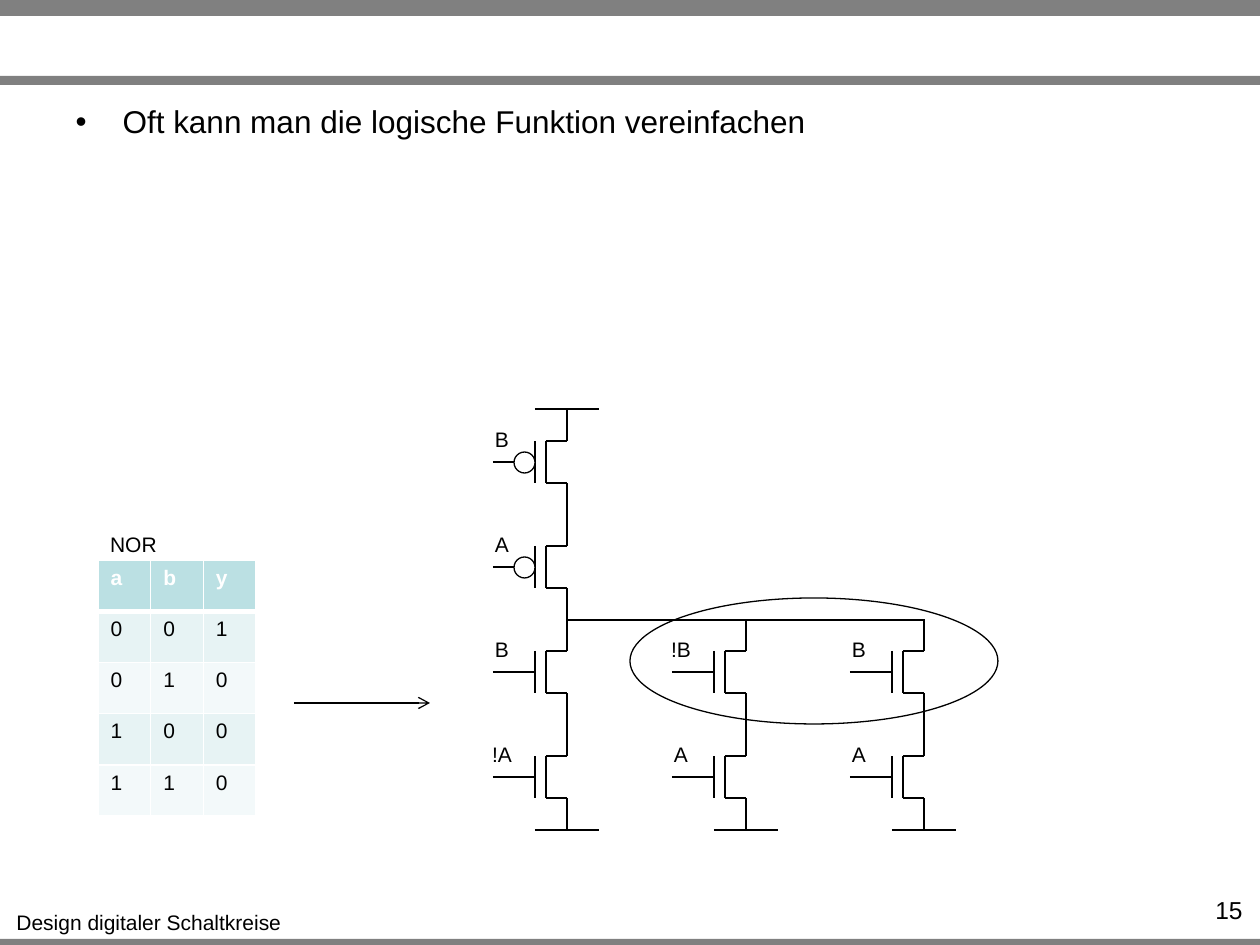
from lxml.etree import SubElement
from pptx import Presentation
from pptx.dml.color import RGBColor
from pptx.enum.shapes import MSO_CONNECTOR, MSO_SHAPE
from pptx.enum.text import MSO_ANCHOR, MSO_AUTO_SIZE, PP_ALIGN
from pptx.oxml.ns import qn
from pptx.util import Pt

BLACK = RGBColor(0x00, 0x00, 0x00)
WHITE = RGBColor(0xFF, 0xFF, 0xFF)
GREY = RGBColor(0x80, 0x80, 0x80)
HEADER = RGBColor(0xBB, 0xE0, 0xE3)
ODD_ROW = RGBColor(0xE7, 0xF3, 0xF4)
EVEN_ROW = RGBColor(0xF3, 0xF9, 0xFA)

WIDTH, HEIGHT = 1260, 945
PITCH = 105  # distance between stacked transistors
SUPPLY, RAIL, GROUND = 409, 620, 830
TOP_ROW = 462

TRUTH_TABLE = ["aby", "001", "010", "100", "110"]
# Drain x, row of the first transistor, gate labels from top to bottom
BRANCHES = [(567, 0, ["B", "A", "B", "!A"]),
            (746, 2, ["!B", "A"]),
            (924, 2, ["B", "A"])]
P_ROWS = 2


def px(length):
    return round(length * 914400 / 126)


class SlideBuilder:
    font = "Arial"
    line_width = Pt(0.75)

    def __init__(self, deck):
        self.slide = deck.slides.add_slide(deck.slide_layouts[1])
        self.shapes = self.slide.shapes

    def style(self, para, size, color=BLACK, bold=False):
        para.font.name = self.font
        para.font.size = Pt(size)
        para.font.bold = bold
        para.font.color.rgb = color

    def bullet(self, text, x, y, width, height):
        title = self.shapes.title.element
        title.getparent().remove(title)
        body = self.slide.placeholders[1]
        body.left, body.top, body.width, body.height = map(px, (x, y, width, height))
        frame = body.text_frame
        frame.auto_size = MSO_AUTO_SIZE.NONE
        frame.vertical_anchor = MSO_ANCHOR.TOP
        para = frame.paragraphs[0]
        para.text = text
        para.space_before = Pt(0)
        properties = para._p.get_or_add_pPr()
        properties.set("marL", str(px(47)))
        properties.set("indent", str(px(-47)))
        self.style(para, 18)

    def text(self, text, x, y, width, height=38, size=12, align=PP_ALIGN.CENTER):
        box = self.shapes.add_textbox(px(x), px(y), px(width), px(height))
        box.text_frame.word_wrap = False
        para = box.text_frame.paragraphs[0]
        para.text = text
        para.alignment = align
        self.style(para, size)

    def shape(self, kind, x, y, width, height, fill=None, line=None):
        shape = self.shapes.add_shape(kind, px(x), px(y), px(width), px(height))
        shape.shadow.inherit = False
        if fill is None:
            shape.fill.background()
        else:
            shape.fill.solid()
            shape.fill.fore_color.rgb = fill
        if line is None:
            shape.line.fill.background()
        else:
            shape.line.color.rgb = line
            shape.line.width = self.line_width

    def line(self, x1, y1, x2, y2, arrow=False):
        connector = self.shapes.add_connector(
            MSO_CONNECTOR.STRAIGHT, px(x1), px(y1), px(x2), px(y2))
        connector.line.color.rgb = BLACK
        connector.line.width = self.line_width
        if arrow:
            SubElement(connector.line._get_or_add_ln(), qn("a:tailEnd"), type="arrow")
        SubElement(connector.element.spPr, qn("a:effectLst"))

    def transistor(self, x, y, label, p_type=False):
        """Draw a transistor with drain and source at x and its gate at height y."""
        channel, gate, lead = x - 21, x - 32, x - 74
        self.line(channel, y - 21, channel, y + 21)
        self.line(gate, y - 21, gate, y + 21)
        for side in (-1, 1):
            self.line(channel, y + side * 21, x, y + side * 21)
            self.line(x, y + side * 21, x, y + side * 53)
        self.line(lead, y, gate, y)
        if p_type:
            self.shape(MSO_SHAPE.OVAL, gate - 21, y - 10, 21, 21, WHITE, BLACK)
        self.text(label, x - 90, y - 42, 50)

    def border(self, cell, side, width):
        line = SubElement(cell._tc.get_or_add_tcPr(), qn(f"a:ln{side}"), w=str(Pt(width)))
        fill = SubElement(line, qn("a:solidFill"))
        SubElement(fill, qn("a:srgbClr"), val=str(WHITE))

    def table(self, rows, x, y, width, height):
        grid = self.shapes.add_table(
            len(rows), len(rows[0]), px(x), px(y), px(width), px(height)).table
        for row, values in enumerate(rows):
            header = row == 0
            fill = HEADER if header else ODD_ROW if row % 2 else EVEN_ROW
            for column, value in enumerate(values):
                cell = grid.cell(row, column)
                for side in "LRTB":
                    thick = (header and side == "B") or (row == 1 and side == "T")
                    self.border(cell, side, 3 if thick else 1)
                cell.fill.solid()
                cell.fill.fore_color.rgb = fill
                para = cell.text_frame.paragraphs[0]
                para.text = value
                para.alignment = PP_ALIGN.LEFT
                self.style(para, 12, WHITE if header else BLACK, header)


def main():
    deck = Presentation()
    deck.slide_width, deck.slide_height = px(WIDTH), px(HEIGHT)
    page = SlideBuilder(deck)

    for y, height in ((939, 6), (0, 16), (76, 9)):
        page.shape(MSO_SHAPE.RECTANGLE, 0, y, WIDTH, height, GREY)
    page.text("Design digitaler Schaltkreise", 3, 903, 292)
    page.text("15", 1146, 889, 109, 30, size=14, align=PP_ALIGN.RIGHT)
    page.bullet("Oft kann man die logische Funktion vereinfachen", 63, 96, 1134, 199)

    page.text("NOR", 97, 525, 73)
    page.table(TRUTH_TABLE, 98, 560, 158, 256)
    page.line(294, 703, 430, 703, arrow=True)

    for x, first_row, labels in BRANCHES:
        for row, label in enumerate(labels, first_row):
            page.transistor(x, TOP_ROW + row * PITCH, label, p_type=row < P_ROWS)
        page.line(x - 32, GROUND, x + 32, GROUND)
    first_x, last_x = BRANCHES[0][0], BRANCHES[-1][0]
    page.line(first_x - 32, SUPPLY, first_x + 32, SUPPLY)
    page.line(first_x, RAIL, last_x, RAIL)
    page.shape(MSO_SHAPE.OVAL, 630, 598, 368, 126, line=BLACK)

    deck.save("out.pptx")


if __name__ == "__main__":
    main()
